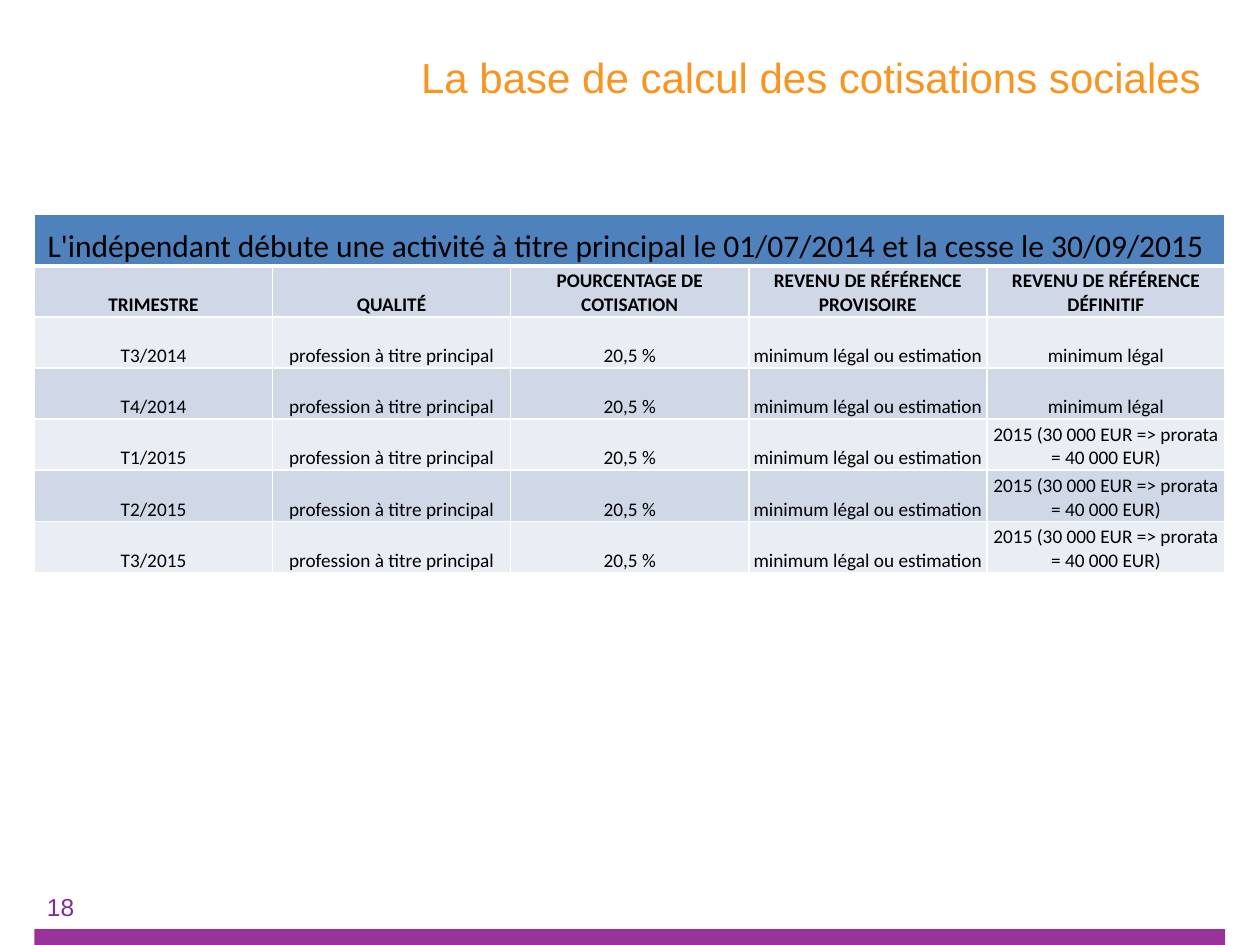
from lxml import etree
from pptx import Presentation
from pptx.dml.color import RGBColor
from pptx.enum.shapes import MSO_SHAPE
from pptx.enum.text import MSO_ANCHOR, PP_ALIGN
from pptx.oxml.ns import qn
from pptx.util import Pt

RECTANGLE = MSO_SHAPE.RECTANGLE
TOP, MIDDLE, BOTTOM = MSO_ANCHOR.TOP, MSO_ANCHOR.MIDDLE, MSO_ANCHOR.BOTTOM
LEFT, CENTER, RIGHT = PP_ALIGN.LEFT, PP_ALIGN.CENTER, PP_ALIGN.RIGHT

COLORS = {
    "title": "F8941F",
    "number": "862996",
    "bar": "993399",
    "banner": "4F81BD",
    "band_dark": "D0D8E8",
    "band_light": "E9EDF4",
    "border": "FFFFFF",
    "text": "000000",
}

BANNER = "L'indépendant débute une activité à titre principal le 01/07/2014 et la cesse le 30/09/2015 "
HEADERS = [
    "TRIMESTRE",
    "QUALITÉ",
    "POURCENTAGE DE COTISATION",
    "REVENU DE RÉFÉRENCE PROVISOIRE",
    "REVENU DE RÉFÉRENCE DÉFINITIF",
]
MINIMUM = "minimum légal"
PRORATED = "2015 (30 000 EUR => prorata = 40 000 EUR)"
QUARTERS = [
    ("T3/2014", MINIMUM),
    ("T4/2014", MINIMUM),
    ("T1/2015", PRORATED),
    ("T2/2015", PRORATED),
    ("T3/2015", PRORATED),
]


def color(name):
    """Return the named colour."""
    return RGBColor.from_string(COLORS[name])


def write(frame, text, size, font_name, color_name, alignment, bold=False):
    """Write one run into the first paragraph of a text frame."""
    paragraph = frame.paragraphs[0]
    paragraph.alignment = alignment
    run = paragraph.add_run()
    run.text = text
    run.font.size = Pt(size)
    run.font.name = font_name
    run.font.bold = bold
    run.font.color.rgb = color(color_name)


def add_label(slide, box, text, size, color_name, alignment, anchor):
    """Add a wrapped text box in Arial."""
    frame = slide.shapes.add_textbox(*map(Pt, box)).text_frame
    frame.word_wrap = True
    frame.vertical_anchor = anchor
    write(frame, text, size, "Arial", color_name, alignment)


def add_bar(slide, box):
    """Add the plain bar at the foot of the slide."""
    shape = slide.shapes.add_shape(RECTANGLE, *map(Pt, box))
    shape.shadow.inherit = False
    shape.fill.solid()
    shape.fill.fore_color.rgb = color("bar")
    shape.line.fill.background()


def add_borders(cell, widths):
    """Draw the cell borders, with widths in points by side."""
    properties = cell._tc.get_or_add_tcPr()
    for side, width in widths.items():
        line = etree.SubElement(properties, qn(f"a:ln{side}"), w=str(int(Pt(width))))
        fill = etree.SubElement(line, qn("a:solidFill"))
        etree.SubElement(fill, qn("a:srgbClr"), val=COLORS["border"])


def style_cell(cell, row):
    """Set the margins, borders and fill of a cell from its row."""
    cell.margin_left = cell.margin_right = cell.margin_top = Pt(0.7)
    cell.margin_bottom = Pt(0)
    cell.vertical_anchor = BOTTOM
    top = 3 if row == 1 else 1
    bottom = 3 if row == 0 else 1
    add_borders(cell, {"L": 1, "R": 1, "T": top, "B": bottom})
    band = "band_dark" if row % 2 else "band_light"
    cell.fill.solid()
    cell.fill.fore_color.rgb = color(band if row else "banner")


def add_contribution_table(slide, box):
    """Add the table of contributions by quarter under its banner."""
    rows = [HEADERS]
    for quarter, final_income in QUARTERS:
        rows.append([quarter, "profession à titre principal", "20,5 %",
                     "minimum légal ou estimation", final_income])
    row_count, column_count = len(rows) + 1, len(HEADERS)
    table = slide.shapes.add_table(row_count, column_count, *map(Pt, box)).table
    for column in table.columns:
        column.width = Pt(box[2] / column_count)
    for row in table.rows:
        row.height = Pt(box[3] / row_count)
    for index in range(row_count):
        for column in range(column_count):
            style_cell(table.cell(index, column), index)
    banner = table.cell(0, 0)
    banner.merge(table.cell(0, column_count - 1))
    write(banner.text_frame, BANNER, 18, "Calibri", "text", CENTER)
    for index, texts in enumerate(rows, 1):
        for column, text in enumerate(texts):
            frame = table.cell(index, column).text_frame
            write(frame, text, 11, "Calibri", "text", CENTER, bold=index == 1)


def main():
    """Build the slide and save it."""
    presentation = Presentation()
    presentation.slide_width, presentation.slide_height = Pt(720), Pt(540)
    slide = presentation.slides.add_slide(presentation.slide_layouts[6])
    add_bar(slide, (19.7, 531, 680.4, 9))
    add_label(slide, (165, 0, 535, 88), "La base de calcul des cotisations sociales ",
              24, "title", RIGHT, MIDDLE)
    add_contribution_table(slide, (19.7, 122.7, 680.4, 204.4))
    add_label(slide, (19.7, 506, 145, 36), "18", 14, "number", LEFT, TOP)
    presentation.save("out.pptx")


if __name__ == "__main__":
    main()
